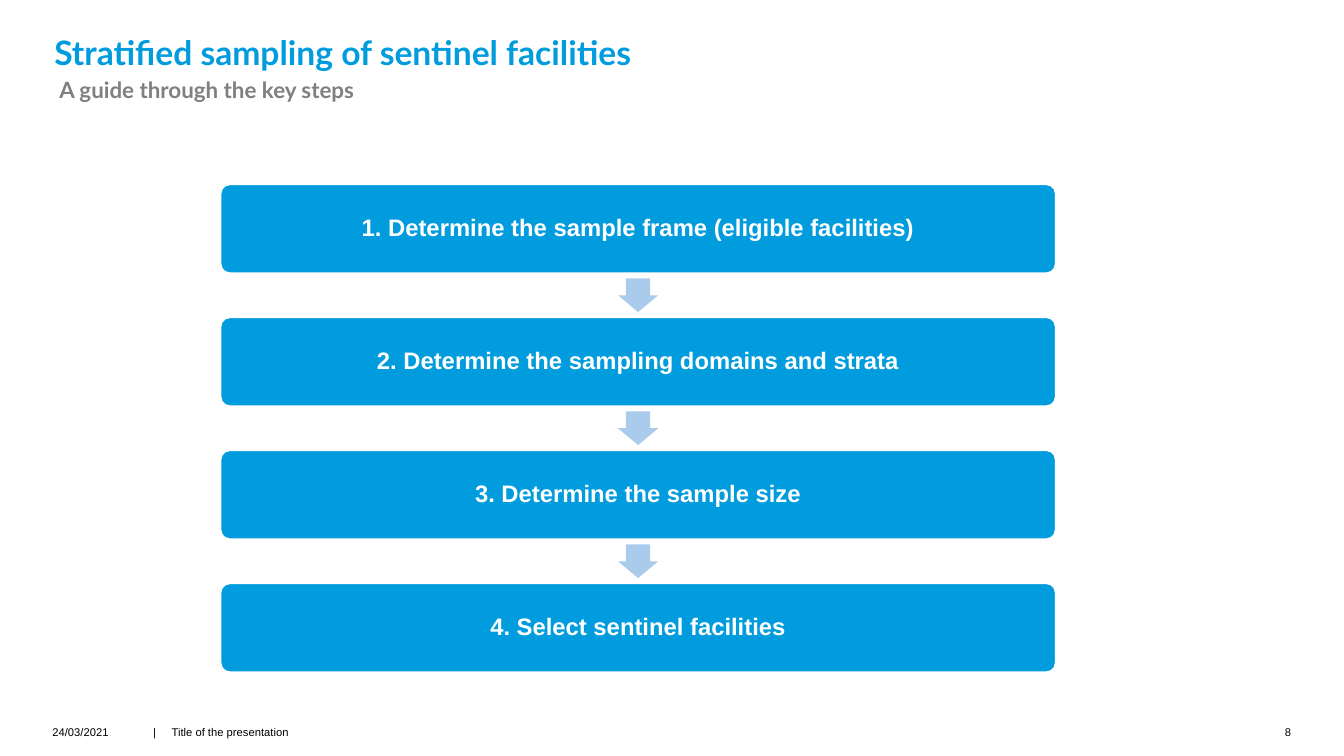
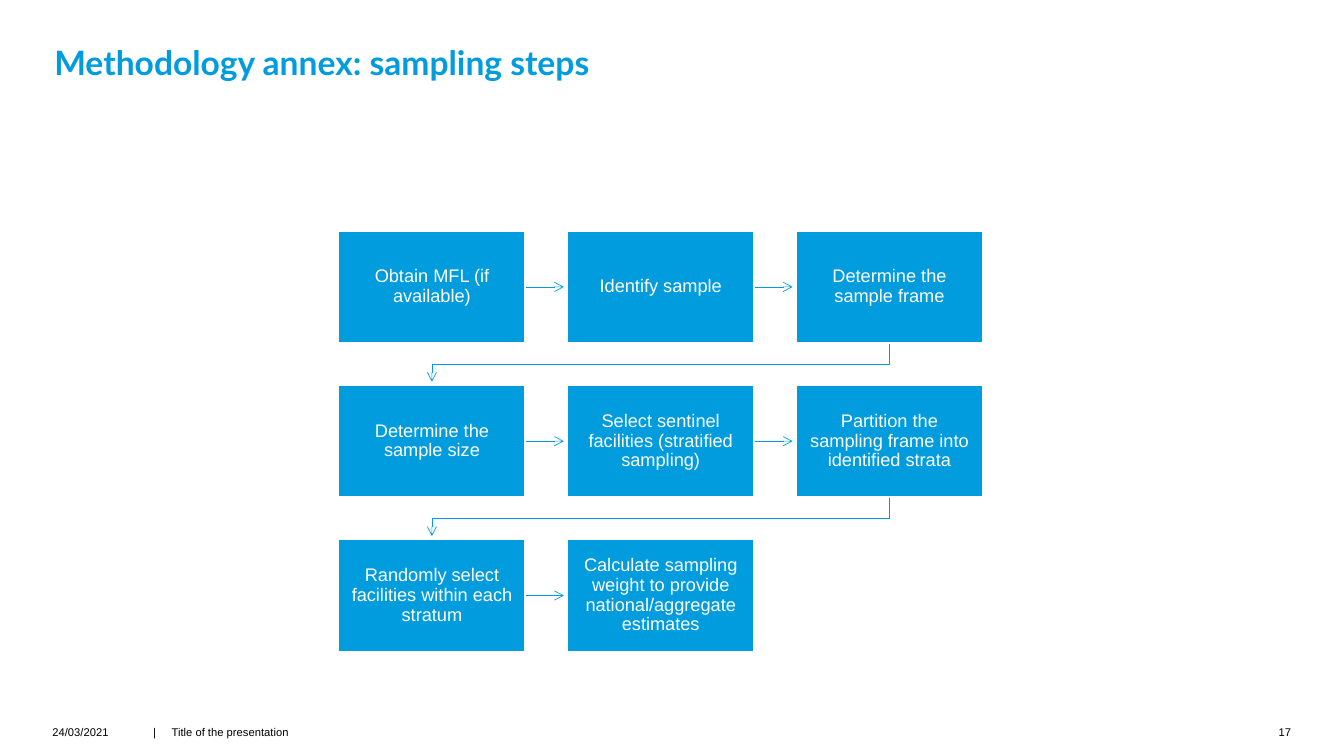
from lxml.etree import SubElement
from pptx import Presentation
from pptx.dml.color import RGBColor
from pptx.enum.shapes import MSO_CONNECTOR as Connector, MSO_SHAPE as Shape
from pptx.enum.text import MSO_ANCHOR as Anchor, PP_ALIGN as Align
from pptx.oxml.ns import qn
from pptx.util import Pt

BLUE, PALE_BLUE, GREY, BLACK, WHITE = "009CDE", "ABCBEC", "808080", "000000", "FFFFFF"
HEADING_FONT, BODY_FONT = "Lato", "Arial"
MARGIN = 37.4
FOOTER_TOP, FOOTER_HEIGHT = 518.4, 14.4

STEPS = [
    "1. Determine the sample frame (eligible facilities)",
    "2. Determine the sampling domains and strata",
    "3. Determine the sample size",
    "4. Select sentinel facilities",
]
ANNEX_STEPS = [
    "Obtain MFL (if available)",
    "Identify sample",
    "Determine the sample frame",
    "Determine the sample size",
    "Select sentinel facilities (stratified sampling)",
    "Partition the sampling frame into identified strata",
    "Randomly select facilities within each stratum",
    "Calculate sampling weight to provide national/aggregate estimates",
]


def color(hex_code):
    return RGBColor.from_string(hex_code)


def write(shape, text, size, hex_code, font=BODY_FONT, bold=False, align=Align.LEFT,
          anchor=Anchor.TOP, spacing=1.0, insets=(0, 0, 0, 0)):
    """Fill a shape with one paragraph; insets run left, top, right, bottom."""
    frame = shape.text_frame
    frame.word_wrap = True
    frame.vertical_anchor = anchor
    left, top, right, bottom = insets
    frame.margin_left, frame.margin_top = Pt(left), Pt(top)
    frame.margin_right, frame.margin_bottom = Pt(right), Pt(bottom)
    para = frame.paragraphs[0]
    para.text = text
    para.alignment = align
    para.line_spacing = spacing
    para.font.name, para.font.size, para.font.bold = font, Pt(size), bold
    para.font.color.rgb = color(hex_code)


def add_text(page, box, text, size, hex_code, **style):
    write(page.shapes.add_textbox(*map(Pt, box)), text, size, hex_code, **style)


def add_block(page, kind, box, fill, outline=None):
    shape = page.shapes.add_shape(kind, *map(Pt, box))
    shape.shadow.inherit = False
    shape.fill.solid()
    shape.fill.fore_color.rgb = color(fill)
    if outline:
        shape.line.color.rgb = color(outline)
        shape.line.width = Pt(1)
    else:
        shape.line.fill.background()
    return shape


def add_arrow(page, points):
    """Draw a thin arrow along the points, the head at the last one."""
    points = [(Pt(x), Pt(y)) for x, y in points]
    if len(points) == 2:
        arrow = page.shapes.add_connector(Connector.STRAIGHT, *points[0], *points[1])
    else:
        builder = page.shapes.build_freeform(*points[0])
        builder.add_line_segments(points[1:], close=False)
        arrow = builder.convert_to_shape()
        arrow.fill.background()
    arrow.line.color.rgb = color(BLUE)
    arrow.line.width = Pt(0.5)
    properties = arrow._element.spPr
    SubElement(properties.find(qn("a:ln")), qn("a:tailEnd"), type="arrow")
    SubElement(properties, qn("a:effectLst"))


def add_page(deck, title, title_top, title_height, number):
    """Add a blank page with the shared title and footer."""
    page = deck.slides.add_slide(deck.slide_layouts[6])
    add_text(page, (MARGIN, title_top, 642.2, title_height), title, 24, BLUE,
             font=HEADING_FONT, bold=True, anchor=Anchor.BOTTOM, spacing=0.9,
             insets=(1.4, 0, 28, 0))
    footer = [
        (MARGIN, 62, "24/03/2021", Align.LEFT),
        (109.4, 10, "|", Align.LEFT),
        (122.6, 220, "Title of the presentation", Align.LEFT),
        (899.3, 23, str(number), Align.RIGHT),
    ]
    for left, width, text, align in footer:
        add_text(page, (left, FOOTER_TOP, width, FOOTER_HEIGHT), text, 8, BLACK, align=align)
    return page


def add_step_stack(page, box, steps, gap=31.8):
    """Stack the steps in the box with a block arrow in each gap."""
    left, top, width, height = box
    step_height = (height - gap * (len(steps) - 1)) / len(steps)
    arrow_width, arrow_height = 28.8, 24
    for index, step in enumerate(steps):
        step_top = top + index * (step_height + gap)
        bar = add_block(page, Shape.ROUNDED_RECTANGLE,
                        (left, step_top, width, step_height), BLUE, WHITE)
        bar.adjustments[0] = 0.1
        write(bar, step, 17, WHITE, bold=True, align=Align.CENTER, anchor=Anchor.MIDDLE,
              spacing=0.9, insets=(5, 5, 5, 5))
        if index:
            arrow = add_block(page, Shape.DOWN_ARROW,
                              (left + (width - arrow_width) / 2,
                               step_top - (gap + arrow_height) / 2,
                               arrow_width, arrow_height), PALE_BLUE)
            arrow.adjustments[0], arrow.adjustments[1] = 0.6, 0.5


def add_step_grid(page, box, steps, columns=3, rows=3, gap=30.2):
    """Lay the steps out row by row, each joined to the next by an arrow."""
    left, top, width, height = box
    cell_width = (width - gap * (columns - 1)) / columns
    cell_height = (height - gap * (rows - 1)) / rows
    clearance = 2.5
    for index, step in enumerate(steps):
        row, column = divmod(index, columns)
        x = left + column * (cell_width + gap)
        y = top + row * (cell_height + gap)
        right, bottom = x + cell_width, y + cell_height
        if index < len(steps) - 1:
            if column < columns - 1:
                middle = y + cell_height / 2
                route = [(right, middle), (right + gap - clearance, middle)]
            else:
                start, end = x + cell_width / 2, left + cell_width / 2
                bend = bottom + gap / 2
                route = [(start, bottom), (start, bend), (end, bend),
                         (end, bottom + gap - clearance)]
            add_arrow(page, route)
        cell = add_block(page, Shape.RECTANGLE, (x, y, cell_width, cell_height), BLUE, WHITE)
        write(cell, step, 13, WHITE, align=Align.CENTER, anchor=Anchor.MIDDLE,
              spacing=0.9, insets=(7, 7, 7, 7))


def add_key_steps_page(deck):
    page = add_page(deck, "Stratified sampling of sentinel facilities", 26.6, 25.2, 8)
    add_text(page, (MARGIN, 51.8, 642.2, 23), "A guide through the key steps", 16, GREY,
             font=HEADING_FONT, bold=True, anchor=Anchor.MIDDLE, spacing=1.1,
             insets=(5, 0, 1.4, 0))
    add_step_stack(page, (157.7, 131.8, 596.2, 348.2), STEPS)


def add_annex_page(deck):
    page = add_page(deck, "Methodology annex: sampling steps", 28.1, 31, 17)
    add_step_grid(page, (241.9, 164.9, 460, 300.5), ANNEX_STEPS)


def main():
    deck = Presentation()
    deck.slide_width, deck.slide_height = Pt(960), Pt(540)
    add_key_steps_page(deck)
    add_annex_page(deck)
    deck.save("out.pptx")


if __name__ == "__main__":
    main()
